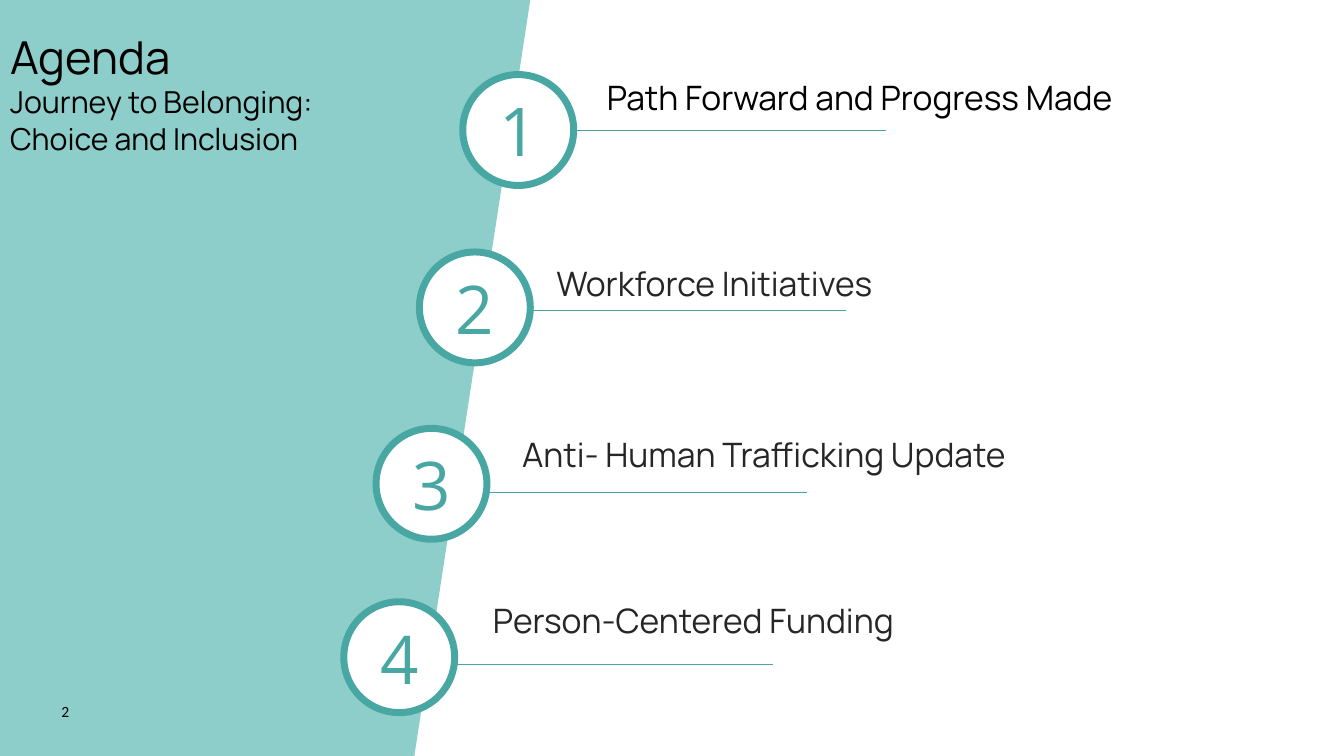
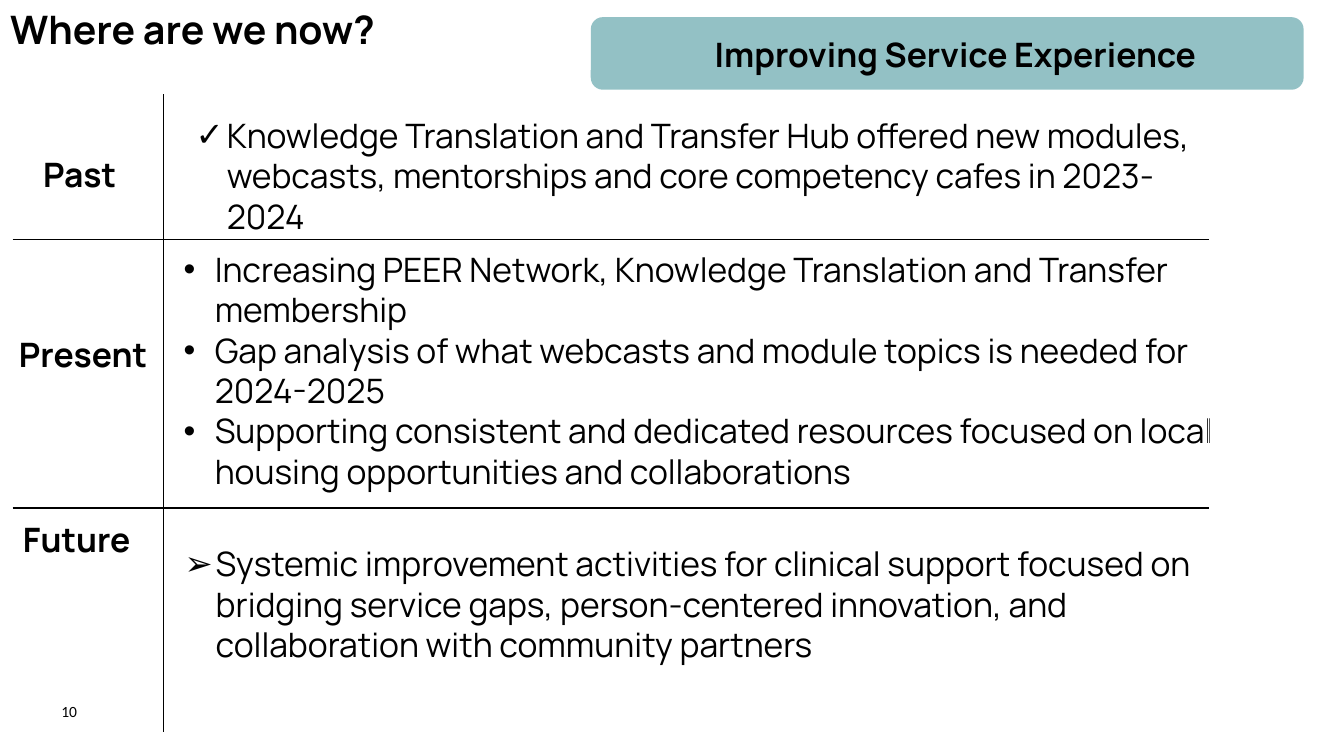
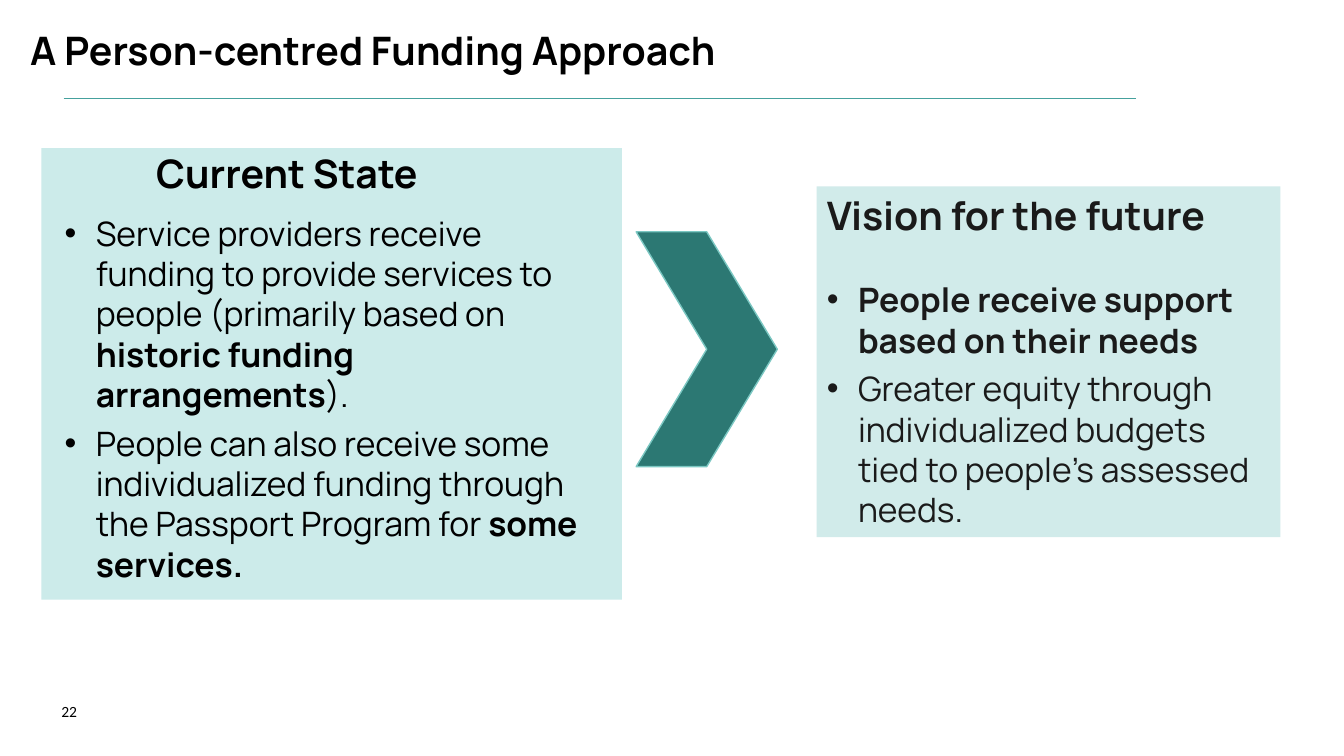
from lxml.etree import SubElement
from pptx import Presentation
from pptx.dml.color import RGBColor
from pptx.enum.shapes import MSO_CONNECTOR, MSO_SHAPE
from pptx.enum.text import MSO_ANCHOR, MSO_AUTO_SIZE, PP_ALIGN
from pptx.oxml.ns import qn
from pptx.util import Inches, Pt

FONT = "Manrope"
BLACK, WHITE, CHARCOAL, INK = "000000", "FFFFFF", "262626", "1A1A1A"
TEAL, TEAL_PANEL, TEAL_RULE = "48A7A2", "8DCECA", "45A19D"
BADGE, CURRENT_FILL, VISION_FILL = "81B7BC", "CCEBEA", "D1EBEA"
ARROW_FILL, ARROW_LINE = "2C7873", "7BC7C2"
TITLE_ONLY, TWO_CONTENT, COMPARISON = 5, 3, 4


def rgb(color):
    return RGBColor.from_string(color)


def style_paragraph(paragraph, size, color=BLACK, bold=False, font=FONT, align=PP_ALIGN.LEFT):
    paragraph.alignment = align
    for run in paragraph.runs:
        run.font.size = Pt(size)
        run.font.name = font
        run.font.bold = bold
        run.font.color.rgb = rgb(color)


def prepare_frame(frame, anchor=MSO_ANCHOR.TOP):
    frame.word_wrap = True
    frame.auto_size = MSO_AUTO_SIZE.NONE
    frame.vertical_anchor = anchor
    return frame


def place(part, box):
    part.left, part.top, part.width, part.height = map(Inches, box)


def send_to_back(slide, part):
    slide.shapes._spTree.insert(2, part._element)


def add_text(slide, box, text, size, anchor=MSO_ANCHOR.TOP, **style):
    label = slide.shapes.add_textbox(*map(Inches, box))
    frame = prepare_frame(label.text_frame, anchor)
    frame.text = text
    style_paragraph(frame.paragraphs[0], size, **style)


def add_block(slide, preset, box, fill, line=None, weight=1):
    block = slide.shapes.add_shape(preset, *map(Inches, box))
    return paint(block, fill, line, weight)


def paint(block, fill, line=None, weight=1):
    block.shadow.inherit = False
    block.fill.solid()
    block.fill.fore_color.rgb = rgb(fill)
    if line:
        block.line.color.rgb = rgb(line)
        block.line.width = Pt(weight)
    else:
        block.line.fill.background()
    return block


def add_rule(slide, left, right, y, color):
    rule = slide.shapes.add_connector(
        MSO_CONNECTOR.STRAIGHT, Inches(left), Inches(y), Inches(right), Inches(y))
    rule.line.color.rgb = rgb(color)
    rule.line.width = Pt(0.5)
    SubElement(rule._element.spPr, qn("a:effectLst"))


def set_title(slide, box, text, size=28, bold=True, anchor=MSO_ANCHOR.TOP):
    title = slide.shapes.title
    place(title, box)
    frame = prepare_frame(title.text_frame, anchor)
    frame.text = text
    for paragraph in frame.paragraphs:
        style_paragraph(paragraph, size, bold=bold)
    return frame


def add_slide(deck, layout, number):
    slide = deck.slides.add_slide(deck.slide_layouts[layout])
    add_text(slide, (0.51, 6.86, 0.56, 0.4), number, 11.1, MSO_ANCHOR.MIDDLE, font="Calibri")
    return slide


def set_bullet(paragraph, mark):
    properties = paragraph._p.get_or_add_pPr()
    indent = Inches(0.31) if mark else 0
    properties.set("marL", str(indent))
    properties.set("indent", str(-indent))
    if mark:
        SubElement(properties, qn("a:buFont")).set("typeface", "Arial")
        SubElement(properties, qn("a:buChar")).set("char", mark)
    else:
        SubElement(properties, qn("a:buNone"))


def add_item(paragraph, text, mark, gap=0, color=BLACK):
    set_bullet(paragraph, mark)
    paragraph.space_before = Pt(0)
    paragraph.space_after = Pt(gap)
    for position, piece in enumerate(text.split("*")):
        if piece:
            paragraph.add_run().text = piece
            paragraph.runs[-1].font.bold = position % 2 == 1
    weights = [run.font.bold for run in paragraph.runs]
    style_paragraph(paragraph, 24, color)
    for run, bold in zip(paragraph.runs, weights):
        run.font.bold = bold


def fill_list(body, box, items, mark="•", gap=0):
    place(body, box)
    frame = prepare_frame(body.text_frame)
    for position, item in enumerate(items):
        paragraph = frame.add_paragraph() if position else frame.paragraphs[0]
        add_item(paragraph, item, mark, gap)


def add_agenda_panel(slide):
    outline = slide.shapes.build_freeform(0, 0, scale=1.0)
    corners = [(5.26, 0), (4.11, 7.5), (0, 7.5)]
    outline.add_line_segments([(Inches(x), Inches(y)) for x, y in corners], close=True)
    send_to_back(slide, paint(outline.convert_to_shape(), TEAL_PANEL))


def add_agenda_item(slide, number, topic, circle, rule, label, color):
    diameter = 1.1
    left, top = circle
    rule_end, rule_y = rule
    add_rule(slide, left + diameter, rule_end, rule_y, TEAL)
    disc = add_block(slide, MSO_SHAPE.OVAL, (left, top, diameter, diameter), WHITE, TEAL, 5)
    frame = prepare_frame(disc.text_frame, MSO_ANCHOR.MIDDLE)
    frame.word_wrap = False
    frame.margin_left = frame.margin_right = frame.margin_top = frame.margin_bottom = 0
    frame.text = str(number)
    style_paragraph(frame.paragraphs[0], 48, TEAL, font="Open Sans", align=PP_ALIGN.CENTER)
    add_text(slide, (*label, 6.2, 0.5), topic, 24, color=color)


def build_agenda(deck):
    slide = add_slide(deck, TITLE_ONLY, "2")
    add_agenda_panel(slide)
    heading = set_title(slide, (0, 0.24, 3.65, 1.45),
                        "Agenda\nJourney to Belonging:\nChoice and Inclusion", 21.6, False)
    heading.paragraphs[0].runs[0].font.size = Pt(32.4)
    topics = [
        ("Path Forward and Progress Made", (4.59, 0.74), (8.79, 1.29), (5.92, 0.71), BLACK),
        ("Workforce Initiatives", (4.16, 2.5), (8.39, 3.08), (5.42, 2.56), CHARCOAL),
        ("Anti- Human Trafficking Update", (3.73, 4.25), (8, 4.88), (5.08, 4.26), CHARCOAL),
        ("Person-Centered Funding", (3.41, 5.97), (7.67, 6.59), (4.79, 5.9), CHARCOAL),
    ]
    for number, topic in enumerate(topics, 1):
        add_agenda_item(slide, number, *topic)


def set_borders(cell, sides):
    cell.fill.background()
    properties = cell._tc.get_or_add_tcPr()
    for position, side in enumerate(side for side in "LRTB" if side in sides):
        border = SubElement(properties, qn("a:ln" + side))
        border.set("w", str(Pt(1)))
        SubElement(SubElement(border, qn("a:solidFill")), qn("a:srgbClr")).set("val", BLACK)
        properties.insert(position, border)


def add_timeline_grid(slide, box, widths, heights):
    grid = slide.shapes.add_table(len(heights), len(widths), *map(Inches, box)).table
    grid.first_row = grid.horz_banding = False
    for column, width in zip(grid.columns, widths):
        column.width = Inches(width)
    for index, (row, height) in enumerate(zip(grid.rows, heights)):
        row.height = Inches(height)
        sides = ("T" if index else "") + ("B" if index < len(heights) - 1 else "")
        for cell, inner in zip(row.cells, "RL"):
            set_borders(cell, sides + inner)


def add_badge(slide, box, text):
    left, top, width, height = box
    badge = add_block(slide, MSO_SHAPE.ROUNDED_RECTANGLE, box, BADGE)
    tint = badge._element.spPr.find(qn("a:solidFill"))[0]
    SubElement(tint, qn("a:alpha")).set("val", "85000")
    add_text(slide, (left + 0.45, top + 0.12, width - 0.74, 0.5), text, 24,
             bold=True, align=PP_ALIGN.CENTER)


def build_timeline(deck):
    slide = add_slide(deck, COMPARISON, "10")
    set_title(slide, (0, 0, 5.8, 0.57), "Where are we now?")
    add_badge(slide, (5.86, 0.17, 7.07, 0.72), "Improving Service Experience")
    add_timeline_grid(slide, (0.13, 0.94, 11.86, 6.33), (1.49, 10.37), (1.44, 2.66, 2.23))
    periods = [
        ("Past", (0.33, 1.48), "✓", (1.84, 1.09, 10.32, 1.31), [
            "Knowledge Translation and Transfer Hub offered new modules, webcasts, "
            "mentorships and core competency cafes in 2023-2024"]),
        ("Present", (0.09, 3.26), "•", (1.72, 2.42, 10.93, 2.5), [
            "Increasing PEER Network, Knowledge Translation and Transfer membership",
            "Gap analysis of what webcasts and module topics is needed for 2024-2025",
            "Supporting consistent and dedicated resources focused on local housing "
            "opportunities and collaborations"]),
        ("Future", (0.13, 5.1), "➢", (1.73, 5.34, 10.78, 1.31), [
            "Systemic improvement activities for clinical support focused on bridging "
            "service gaps, person-centered innovation, and collaboration with "
            "community partners"]),
    ]
    *bodies, spare = list(slide.placeholders)[1:]
    spare._element.getparent().remove(spare._element)
    for body, (period, corner, mark, box, items) in zip(bodies, periods):
        add_text(slide, (*corner, 1.5, 0.5), period, 24, bold=True)
        fill_list(body, box, items, mark)


def add_current_state(slide, body, box):
    left, top, width, height = box
    send_to_back(slide, add_block(slide, MSO_SHAPE.RECTANGLE, box, CURRENT_FILL))
    add_text(slide, (left + 0.66, top - 0.04, 3.55, 0.57), "Current State", 28,
             bold=True, align=PP_ALIGN.CENTER)
    fill_list(body, (left + 0.13, top + 0.59, width - 0.39, height - 0.66), [
        "Service providers receive funding to provide services to people "
        "(primarily based on *historic funding arrangements*).",
        "People can also receive some individualized funding through the "
        "Passport Program for *some services.*"], gap=6)


def add_vision(body, box):
    place(body, box)
    paint(body, VISION_FILL)
    frame = prepare_frame(body.text_frame)
    frame.text = "Vision for the future"
    heading = frame.paragraphs[0]
    set_bullet(heading, None)
    heading.space_before = Pt(0)
    heading.space_after = Pt(29)
    style_paragraph(heading, 28, INK, bold=True)
    for item in ("*People receive support based on their needs*",
                 "Greater equity through individualized budgets tied to "
                 "people’s assessed needs."):
        add_item(frame.add_paragraph(), item, "•", 6, INK)


def build_funding(deck):
    slide = add_slide(deck, TWO_CONTENT, "22")
    set_title(slide, (0.2, 0.25, 8.96, 0.48), "A Person-centred Funding Approach",
              anchor=MSO_ANCHOR.MIDDLE)
    add_rule(slide, 0.63, 11.27, 0.98, TEAL_RULE)
    current, vision = list(slide.placeholders)[1:]
    add_current_state(slide, current, (0.41, 1.47, 5.76, 4.48))
    add_vision(vision, (8.1, 1.85, 4.6, 3.48))
    add_block(slide, MSO_SHAPE.CHEVRON, (6.31, 2.3, 1.4, 2.33), ARROW_FILL, ARROW_LINE)


def main():
    deck = Presentation()
    deck.slide_width, deck.slide_height = Inches(13.33), Inches(7.5)
    build_agenda(deck)
    build_timeline(deck)
    build_funding(deck)
    deck.save("out.pptx")


if __name__ == "__main__":
    main()
